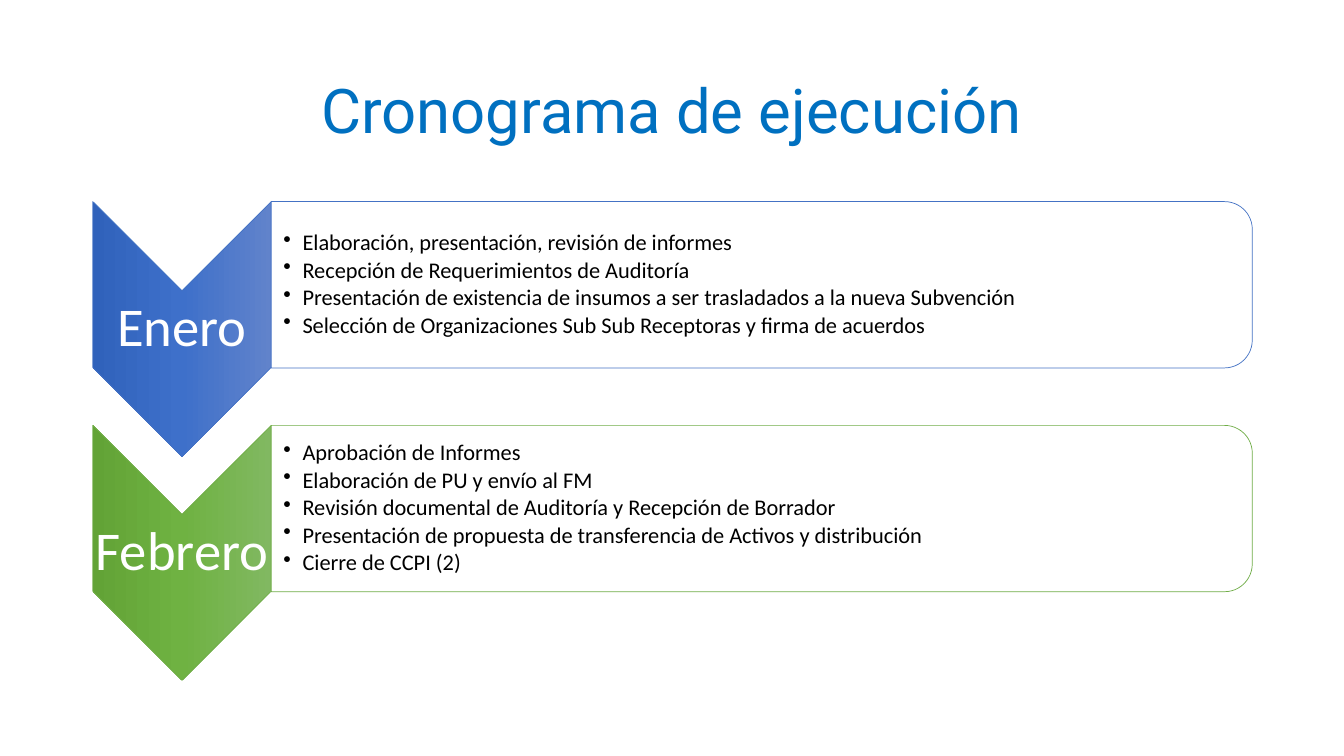
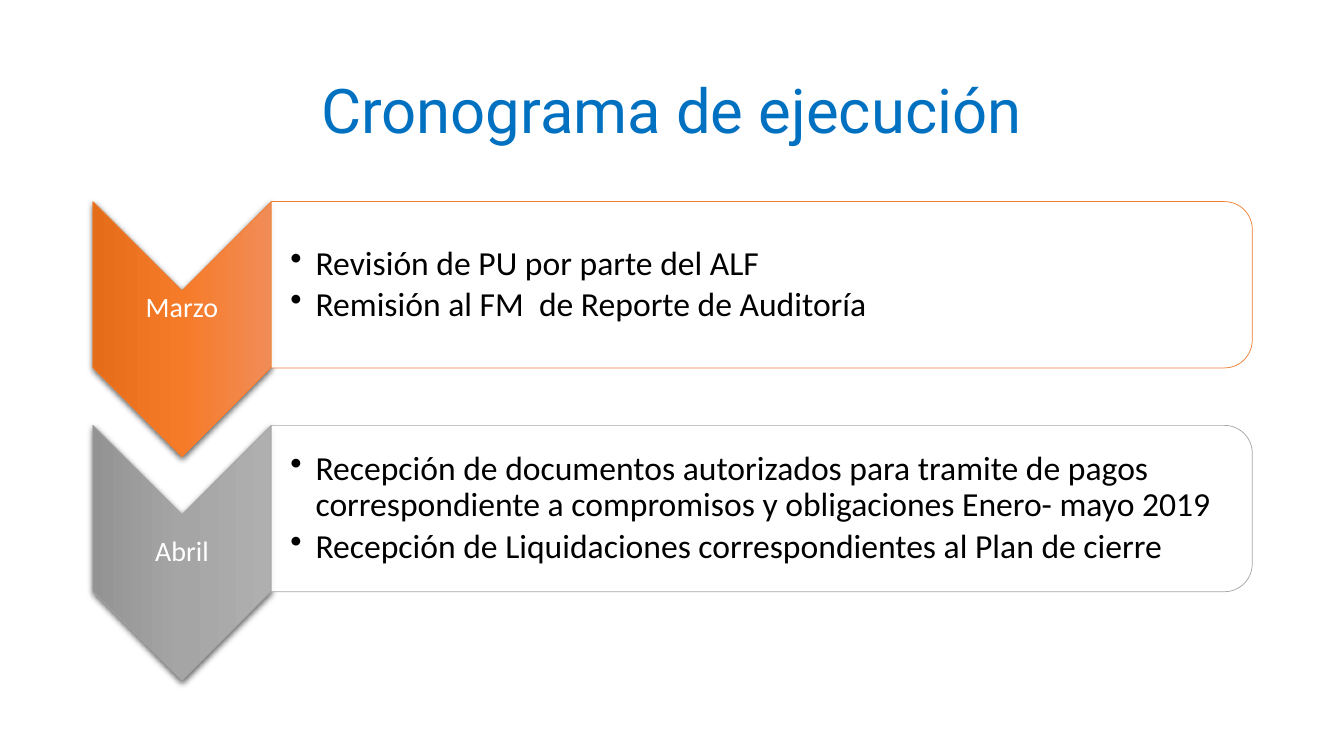
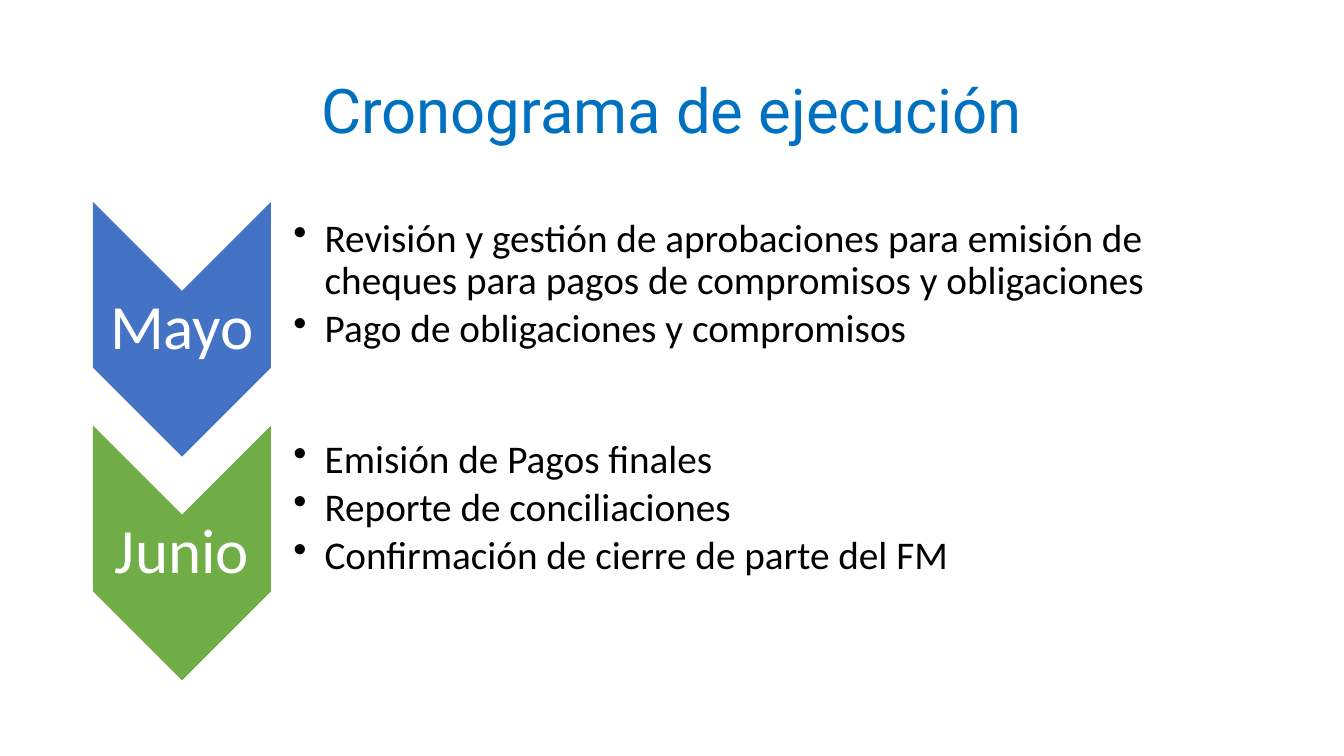
from copy import deepcopy
from dataclasses import dataclass

from lxml import etree
from pptx import Presentation
from pptx.dml.color import RGBColor
from pptx.enum.shapes import MSO_SHAPE
from pptx.enum.text import MSO_ANCHOR, PP_ALIGN
from pptx.oxml.ns import qn
from pptx.util import Inches, Pt

CHEVRON, PANEL = MSO_SHAPE.CHEVRON, MSO_SHAPE.ROUND_2_SAME_RECTANGLE
MIDDLE, CENTER, LEFT = MSO_ANCHOR.MIDDLE, PP_ALIGN.CENTER, PP_ALIGN.LEFT


@dataclass(frozen=True)
class Theme:
    title_font: str = "Roboto"
    body_font: str = "Calibri"
    title_size: int = 44
    title: str = "0070C0"
    text: str = "000000"
    white: str = "FFFFFF"
    blue: str = "4472C4"
    green: str = "70AD47"
    orange: str = "ED7D31"
    gray: str = "A5A5A5"
    line_width: float = 0.5
    line_spacing: float = 0.9


THEME = Theme()
GRADIENTS = {
    THEME.blue: ("6183CB", "3E70CA", "3062BB"),
    THEME.green: ("81B861", "6FB242", "62A336"),
    THEME.orange: ("F18C57", "F67B28", "E56C19"),
    THEME.gray: ("AFAFAF", "A5A5A5", "939393"),
}

# Content: "lift" raises a month's name by the given inches
TITLE = "Cronograma de ejecución"
SLIDES = [
    dict(label_size=39, size=16, inset=0.12, indent=0.19, styled=True, shadow=False, months=[
        dict(name="Enero", color=THEME.blue, tasks=[
            "Elaboración, presentación, revisión de informes",
            "Recepción de Requerimientos de Auditoría",
            "Presentación de existencia de insumos a ser trasladados a la nueva Subvención",
            "Selección de Organizaciones Sub Sub Receptoras y firma de acuerdos"]),
        dict(name="Febrero", color=THEME.green, tasks=[
            "Aprobación de Informes",
            "Elaboración de PU y envío al FM",
            "Revisión documental de Auditoría y Recepción de Borrador",
            "Presentación de propuesta de transferencia de Activos y distribución",
            "Cierre de CCPI (2)"]),
    ]),
    dict(label_size=20, size=24, inset=0.19, indent=0.25, styled=True, shadow=True, months=[
        dict(name="Marzo", color=THEME.orange, lift=0.2, tasks=[
            "Revisión de PU por parte del ALF",
            "Remisión al FM  de Reporte de Auditoría"]),
        dict(name="Abril", color=THEME.gray, tasks=[
            "Recepción de documentos autorizados para tramite de pagos correspondiente "
            "a compromisos y obligaciones Enero- mayo 2019",
            "Recepción de Liquidaciones correspondientes al Plan de cierre"]),
    ]),
    dict(label_size=45, size=28, inset=0.22, indent=0.31, styled=False, shadow=False, months=[
        dict(name="Mayo", color=THEME.blue, tasks=[
            "Revisión y gestión de aprobaciones para emisión de cheques para pagos de "
            "compromisos y obligaciones",
            "Pago de obligaciones y compromisos"]),
        dict(name="Junio", color=THEME.green, tasks=[
            "Emisión de Pagos finales",
            "Reporte de conciliaciones",
            "Confirmación de cierre de parte del FM"]),
    ]),
]

# Grid, in inches
SLIDE_WIDTH, SLIDE_HEIGHT = 13.33, 7.5
MARGIN = 0.92
TITLE_BOX = (MARGIN, 0.4, SLIDE_WIDTH - 2 * MARGIN, 1.45)
FIRST_ROW, ROW_PITCH = 2.0, 2.22
CHEVRON_WIDTH, CHEVRON_HEIGHT = 1.77, 2.53
PANEL_LEFT = MARGIN + CHEVRON_WIDTH
PANEL_WIDTH, PANEL_HEIGHT = 9.73, 1.65
PANEL_PADDING = 0.08


def add_text(slide, box, lines, size, font, color, align=LEFT,
             insets=(0.01, 0.01, 0.01, 0.01), space_after=0, indent=None):
    frame = slide.shapes.add_textbox(*map(Inches, box)).text_frame
    frame.word_wrap = True
    frame.vertical_anchor = MIDDLE
    (frame.margin_left, frame.margin_top,
     frame.margin_right, frame.margin_bottom) = map(Inches, insets)
    for index, line in enumerate(lines):
        paragraph = frame.add_paragraph() if index else frame.paragraphs[0]
        paragraph.alignment = align
        paragraph.line_spacing = THEME.line_spacing
        paragraph.space_after = Pt(size * space_after)
        if indent:
            properties = paragraph._p.get_or_add_pPr()
            properties.set("marL", str(Inches(indent)))
            properties.set("indent", str(-Inches(indent)))
            etree.SubElement(properties, qn("a:buChar"), char="•")
        run = paragraph.add_run()
        run.text = line
        run.font.name, run.font.size = font, Pt(size)
        run.font.color.rgb = RGBColor.from_string(color)


def add_turned_shape(slide, kind, left, top, width, height, fill, line):
    """Add a shape turned by 90 degrees that covers the given visible box."""
    shift = (width - height) / 2
    shape = slide.shapes.add_shape(
        kind, *map(Inches, (left + shift, top - shift, height, width)))
    shape.rotation = 90
    shape.shadow.inherit = False
    shape.fill.solid()
    shape.fill.fore_color.rgb = RGBColor.from_string(fill)
    if line:
        shape.line.color.rgb = RGBColor.from_string(line)
        shape.line.width = Pt(THEME.line_width)
    else:
        shape.line.fill.background()
    return shape


def set_gradient(shape, colors):
    shape.fill.gradient()
    shape.fill.gradient_angle = 270
    stops = shape.fill.gradient_stops
    stop_list = stops[0]._gs.getparent()
    stop_list.append(deepcopy(stops[1]._gs))
    for index, (stop, color) in enumerate(zip(shape.fill.gradient_stops, colors)):
        stop.position = index / (len(colors) - 1)
        stop.color.rgb = RGBColor.from_string(color)


def set_shadow(shape):
    effects = shape._element.spPr.find(qn("a:effectLst"))
    shadow = etree.SubElement(effects, qn("a:outerShdw"), blurRad=str(Pt(4.5)),
                              dist=str(Pt(1.5)), dir="5400000", algn="ctr", rotWithShape="0")
    color = etree.SubElement(shadow, qn("a:srgbClr"), val=THEME.text)
    etree.SubElement(color, qn("a:alpha"), val="63000")


def add_month(slide, top, style, month):
    line = month["color"] if style["styled"] else None
    # Month arrow
    arrow = add_turned_shape(slide, CHEVRON, MARGIN, top, CHEVRON_WIDTH, CHEVRON_HEIGHT,
                             month["color"], line)
    if style["styled"]:
        set_gradient(arrow, GRADIENTS[month["color"]])
    if style["shadow"]:
        set_shadow(arrow)
    notch = CHEVRON_WIDTH / 2
    add_text(slide, (MARGIN, top + notch, CHEVRON_WIDTH, CHEVRON_HEIGHT - 2 * notch),
             [month["name"]], style["label_size"], THEME.body_font, THEME.white, CENTER,
             insets=(0.01, 0.01, 0.01, 0.01 + 2 * month.get("lift", 0)))
    # Task panel
    panel = add_turned_shape(slide, PANEL, PANEL_LEFT, top, PANEL_WIDTH, PANEL_HEIGHT,
                             THEME.white, line)
    fill_color = panel._element.spPr.find(qn("a:solidFill")).find(qn("a:srgbClr"))
    etree.SubElement(fill_color, qn("a:alpha"), val="90000")
    add_text(slide, (PANEL_LEFT, top + PANEL_PADDING, PANEL_WIDTH - PANEL_PADDING,
                     PANEL_HEIGHT - 2 * PANEL_PADDING),
             month["tasks"], style["size"], THEME.body_font, THEME.text,
             insets=(style["inset"], 0.02, 0.02, 0.02), space_after=0.15,
             indent=style["indent"])


def main():
    presentation = Presentation()
    presentation.slide_width = Inches(SLIDE_WIDTH)
    presentation.slide_height = Inches(SLIDE_HEIGHT)
    for content in SLIDES:
        slide = presentation.slides.add_slide(presentation.slide_layouts[6])
        add_text(slide, TITLE_BOX, [TITLE], THEME.title_size, THEME.title_font,
                 THEME.title, CENTER, insets=(0.1, 0.05, 0.1, 0.05))
        for row, month in enumerate(content["months"]):
            add_month(slide, FIRST_ROW + row * ROW_PITCH, content, month)
    presentation.save("out.pptx")


if __name__ == "__main__":
    main()
